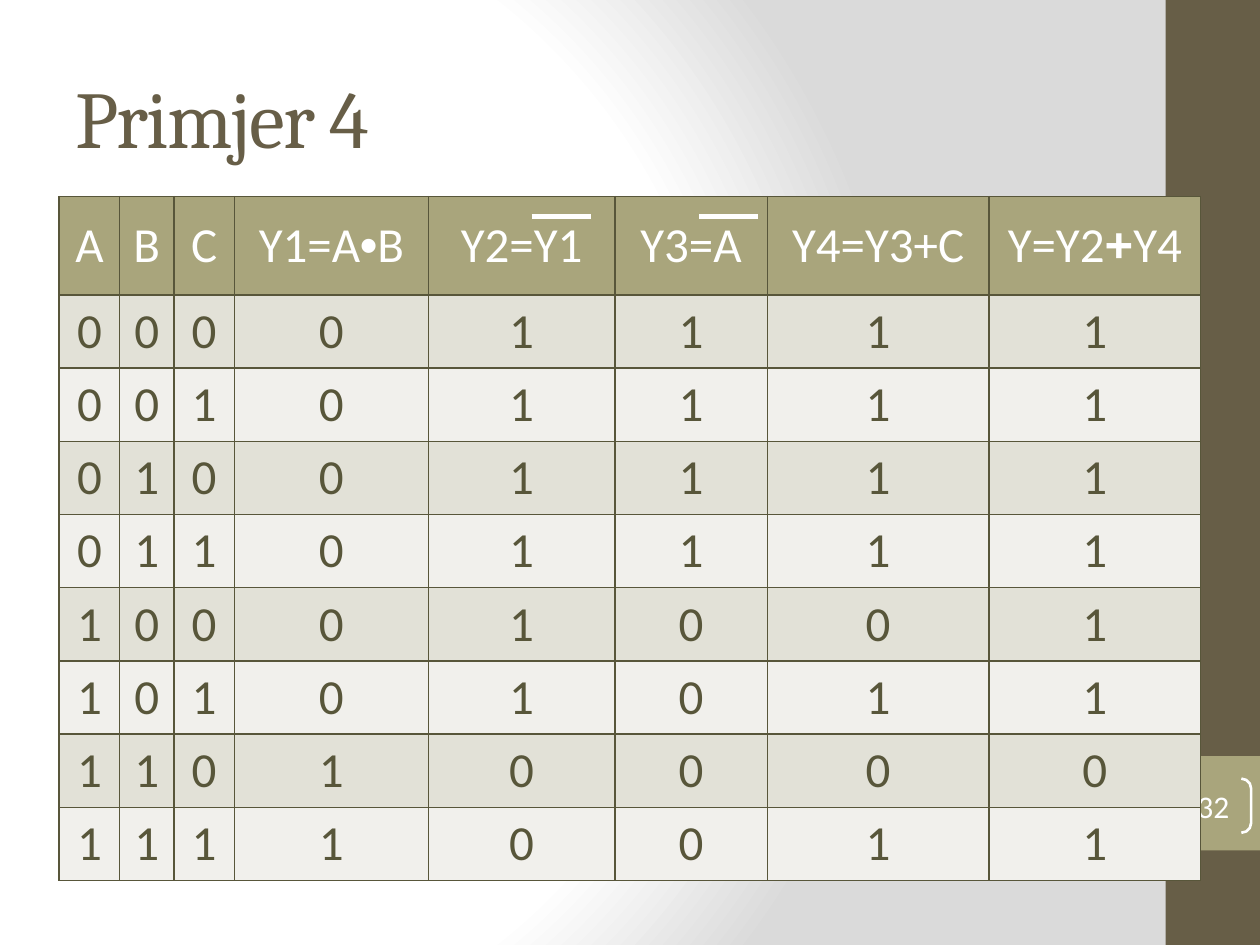
from itertools import product

from pptx import Presentation
from pptx.dml.color import RGBColor
from pptx.enum.shapes import MSO_CONNECTOR, MSO_SHAPE
from pptx.enum.text import MSO_ANCHOR, PP_ALIGN
from pptx.oxml import parse_xml
from pptx.oxml.ns import nsdecls
from pptx.util import Inches, Pt

WIDTH, HEIGHT = 10, 7.5
WHITE = RGBColor(0xFF, 0xFF, 0xFF)
BROWN = RGBColor(0x67, 0x5E, 0x47)
OLIVE = RGBColor(0xA9, 0xA5, 0x7C)
DARK_OLIVE = RGBColor(0x58, 0x56, 0x3A)
BANDS = (RGBColor(0xE2, 0xE1, 0xD7), RGBColor(0xF1, 0xF0, 0xEC))
LIGHT_GREY = RGBColor(0xDA, 0xDA, 0xDA)

OPERATORS = ("•", "+")
# Each heading is a list of spans; a span that is only an operator is bold.
HEADINGS = (["A"], ["B"], ["C"], ["Y1=A", "•", "B"], ["Y2=Y1"], ["Y3=A"],
            ["Y4=Y3+C"], ["Y=Y2", "+", "Y4"])
COLUMNS = (0.48, 0.43, 0.48, 1.54, 1.48, 1.21, 1.76, 1.68)
HEADER_ROW = 0.78
# Negated columns: index and gap from the bar to the column's right edge.
NEGATIONS = ((4, 0.19), (5, 0.07))
BAR_LENGTH, BAR_DROP = 0.47, 0.16


def inches(*lengths):
    return [Inches(length) for length in lengths]


def style(span, size, color, name="Calibri", bold=False):
    span.font.size = Pt(size)
    span.font.name = name
    span.font.bold = bold
    span.font.color.rgb = color


def set_background(page):
    stops = "".join(
        f'<a:gs pos="{share * 1000}"><a:srgbClr val="{color}"/></a:gs>'
        for share, color in ((0, WHITE), (75, WHITE), (100, LIGHT_GREY)))
    background = parse_xml(
        f'<p:bg {nsdecls("p", "a")}><p:bgPr><a:gradFill rotWithShape="1">'
        f'<a:gsLst>{stops}</a:gsLst><a:path path="circle">'
        '<a:fillToRect l="20000" t="50000" r="100000" b="50000"/></a:path>'
        '</a:gradFill><a:effectLst/></p:bgPr></p:bg>')
    page.element.cSld.insert(0, background)


def add_block(page, box, color):
    block = page.shapes.add_shape(MSO_SHAPE.RECTANGLE, *inches(*box))
    block.shadow.inherit = False
    block.fill.solid()
    block.fill.fore_color.rgb = color
    block.line.fill.background()


def add_side_band(page, box):
    left, top, width, height = box
    add_block(page, box, BROWN)
    add_block(page, (left, top + height * 0.8, width, height * 0.1), OLIVE)


def add_title(page, box, text):
    frame = page.shapes.add_textbox(*inches(*box)).text_frame
    frame.word_wrap = True
    frame.vertical_anchor = MSO_ANCHOR.MIDDLE
    frame.text = text
    span = frame.paragraphs[0].runs[0]
    style(span, 46, BROWN, "Cambria")
    span.font._element.set("spc", "-100")


def add_page_number(page, box, number):
    bracket = page.shapes.add_shape(MSO_SHAPE.DOUBLE_BRACKET, *inches(*box))
    bracket.adjustments[0] = 0.18
    bracket.shadow.inherit = False
    bracket.fill.background()
    bracket.line.color.rgb = WHITE
    bracket.line.width = Pt(1.5)
    frame = bracket.text_frame
    frame.margin_left = frame.margin_right = 0
    frame.margin_top = frame.margin_bottom = 0
    frame.vertical_anchor = MSO_ANCHOR.MIDDLE
    frame.text = number
    frame.paragraphs[0].alignment = PP_ALIGN.CENTER
    style(frame.paragraphs[0].runs[0], 18, WHITE)


def add_borders(cell):
    properties = cell._tc.get_or_add_tcPr()
    for index, side in enumerate(("lnL", "lnR", "lnT", "lnB")):
        properties.insert(index, parse_xml(
            f'<a:{side} {nsdecls("a")} w="{Pt(1)}"><a:solidFill>'
            f'<a:srgbClr val="{DARK_OLIVE}"/></a:solidFill></a:{side}>'))


def fill_cell(cell, spans, fill, color):
    cell.fill.solid()
    cell.fill.fore_color.rgb = fill
    add_borders(cell)
    cell.vertical_anchor = MSO_ANCHOR.MIDDLE
    cell.margin_left = cell.margin_right = Inches(0.07)
    cell.margin_top = cell.margin_bottom = 0
    para = cell.text_frame.paragraphs[0]
    para.alignment = PP_ALIGN.CENTER
    properties = para._p.get_or_add_pPr()
    properties.set("marL", "0")
    properties.set("indent", str(-Inches(0.25)))
    for text in spans:
        span = para.add_run()
        span.text = text
        is_operator = text in OPERATORS
        style(span, 28, color, "Arial" if is_operator else "Calibri", is_operator)


def truth_rows():
    for a, b, c in product((0, 1), repeat=3):
        y1 = a & b
        y2 = 1 - y1
        y3 = 1 - a
        y4 = y3 | c
        yield a, b, c, y1, y2, y3, y4, y2 | y4


def add_truth_table(page, box):
    rows = list(truth_rows())
    table = page.shapes.add_table(len(rows) + 1, len(COLUMNS), *inches(*box)).table
    for column, width in zip(table.columns, COLUMNS):
        column.width = Inches(width)
    for row in table.rows:
        row.height = Inches((box[3] - HEADER_ROW) / len(rows))
    table.rows[0].height = Inches(HEADER_ROW)

    for column, spans in enumerate(HEADINGS):
        fill_cell(table.cell(0, column), spans, OLIVE, WHITE)
    for index, values in enumerate(rows):
        for column, value in enumerate(values):
            fill_cell(table.cell(index + 1, column), [str(value)],
                      BANDS[index % 2], DARK_OLIVE)


def add_negation_bars(page, box):
    left, top = box[:2]
    y = top + BAR_DROP
    for column, gap in NEGATIONS:
        end = left + sum(COLUMNS[:column + 1]) - gap
        bar = page.shapes.add_connector(
            MSO_CONNECTOR.STRAIGHT, *inches(end - BAR_LENGTH, y, end, y))
        bar.line.color.rgb = WHITE
        bar.line.width = Pt(3)
        bar._element.spPr.append(parse_xml(f'<a:effectLst {nsdecls("a")}/>'))


def main():
    deck = Presentation()
    deck.slide_width, deck.slide_height = inches(WIDTH, HEIGHT)
    page = deck.slides.add_slide(deck.slide_layouts[6])
    table_box = (0.47, 1.56, sum(COLUMNS), 5.43)

    set_background(page)
    add_side_band(page, (WIDTH * 0.925, 0, WIDTH * 0.075, HEIGHT))
    add_title(page, (0.5, 0.3, 8.33, 1.25), "Primjer 4")
    add_page_number(page, (9.33, 6.18, 0.6, 0.43), "32")
    add_truth_table(page, table_box)
    add_negation_bars(page, table_box)
    deck.save("out.pptx")


if __name__ == "__main__":
    main()
